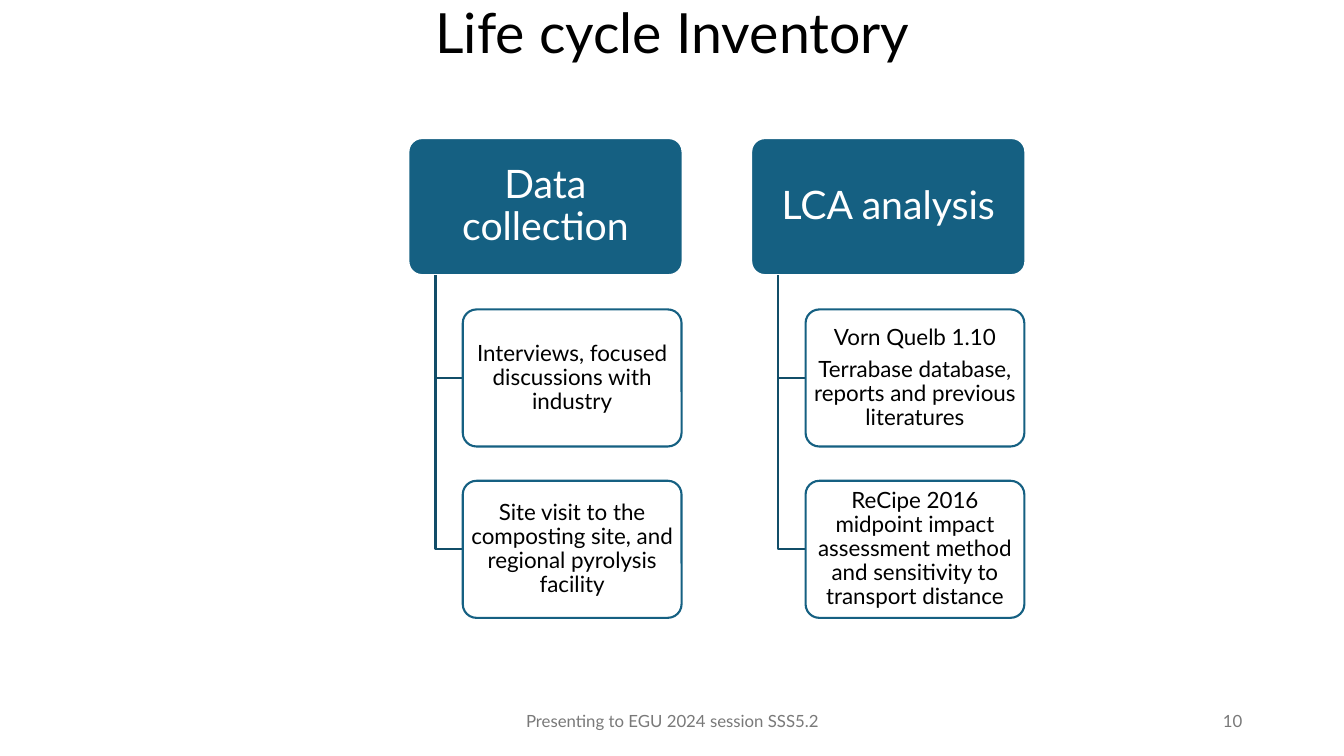
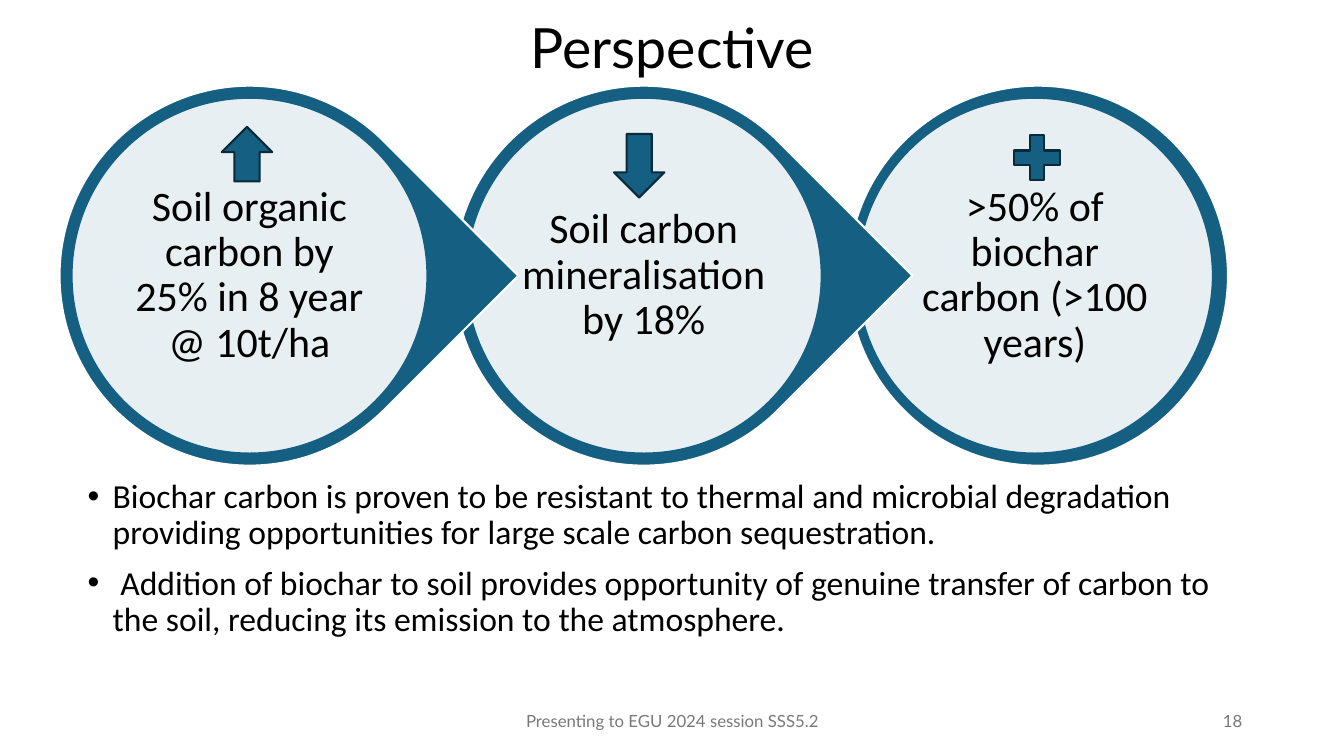
import pptx
import pptx.util
import pptx.dml.color
import pptx.enum.shapes
import pptx.enum.text
import pptx.oxml
import pptx.oxml.ns

Inches = pptx.util.Inches
Pt = pptx.util.Pt
KIND = pptx.enum.shapes.MSO_SHAPE
ALIGN = pptx.enum.text.PP_ALIGN
ANCHOR = pptx.enum.text.MSO_ANCHOR
hues = {"teal": "156082", "deep": "114D68", "edge": "092A39",
        "white": "FFFFFF", "black": "000000", "grey": "797979"}
rgb = {name: pptx.dml.color.RGBColor.from_string(code) for name, code in hues.items()}

base = {"alignment": ALIGN.CENTER, "line_spacing": 0.9}
node = {**base, "space_after": Pt(5.6)}
styles = {
    "title": ("Lato", 39.6, "black", base),
    "foot": ("Lato", 12, "grey", {"alignment": ALIGN.CENTER}),
    "page": ("Lato", 12, "grey", {"alignment": ALIGN.RIGHT}),
    "head": ("Lato", 28, "white", node),
    "leaf": ("Lato", 16, "black", node),
    "disc": ("Calibri", 30, "black", node),
    "body": ("Calibri", 24, "black", {"line_spacing": 0.9, "space_before": Pt(10)}),
}


def write(shape, lines, style, pad=(0.1, 0.05), anchor=ANCHOR.MIDDLE):
    face, size, hue, form = styles[style]
    frame = shape.text_frame
    wide, high = map(Inches, pad)
    setup = {"word_wrap": True, "vertical_anchor": anchor, "margin_left": wide,
             "margin_right": wide, "margin_top": high, "margin_bottom": high}
    for key, value in setup.items():
        setattr(frame, key, value)
    frame.text = "\n".join(lines)
    for para in frame.paragraphs:
        for key, value in form.items():
            setattr(para, key, value)
        font = {"name": face, "size": Pt(size)}
        for key, value in font.items():
            setattr(para.runs[0].font, key, value)
        para.runs[0].font.color.rgb = rgb[hue]


def draw(slide, kind, box, fill, line, alpha=None):
    shape = slide.shapes.add_shape(kind, *map(Inches, box))
    shape.shadow.inherit = False
    shape.fill.solid()
    shape.fill.fore_color.rgb = rgb[fill]
    shape.line.color.rgb = rgb[line]
    shape.line.width = Pt(1.5)
    if alpha:
        tint = shape._element.spPr.find(pptx.oxml.ns.qn("a:solidFill"))[0]
        tint.append(pptx.oxml.parse_xml(
            f'<a:alpha {pptx.oxml.ns.nsdecls("a")} val="{alpha * 1000}"/>'))
    return shape


deck = pptx.Presentation()
deck.slide_width = Inches(13.33)
deck.slide_height = Inches(7.5)

slides = []
for title, top, high, page in [("Life cycle Inventory", 0, 0.71, "10"),
                               ("Perspective", 0.19, 0.63, "18")]:
    slide = deck.slides.add_slide(deck.slide_layouts[6])
    slides.append(slide)
    for text, box, style in [
        (title, (0.92, top, 11.5, high), "title"),
        ("Presenting to EGU 2024 session SSS5.2", (4.42, 6.95, 4.5, 0.4), "foot"),
        (page, (9.42, 6.95, 3, 0.4), "page"),
    ]:
        write(slide.shapes.add_textbox(*map(Inches, box)), [text], style)
flow, view = slides

trees = [
    ("Data collection", [
        ["Interviews, focused discussions with industry"],
        ["Site visit to the composting site, and regional pyrolysis facility"]]),
    ("LCA analysis", [
        ["Vorn Quelb 1.10", "Terrabase database, reports and previous literatures"],
        ["ReCipe 2016 midpoint impact assessment method and sensitivity to transport distance"]]),
]
high, step = 1.36, 1.7
for col, (head, leaves) in enumerate(trees):
    left, top = 4.05 + 3.4 * col, 1.37
    shape = draw(flow, KIND.ROUNDED_RECTANGLE, (left, top, 2.72, high), "teal", "white")
    shape.adjustments[0] = 0.1
    write(shape, [head], "head", (0.08, 0.04))
    stem, edge = left + 0.27, left + 0.54
    for row, lines in enumerate(leaves, 1):
        y = top + step * row
        mid = y + high / 2
        path = flow.shapes.build_freeform(Inches(stem), Inches(top + high))
        path.add_line_segments([(Inches(stem), Inches(mid)), (Inches(edge), Inches(mid))],
                               close=False)
        link = path.convert_to_shape()
        link.shadow.inherit = False
        link.fill.background()
        link.line.color.rgb = rgb["deep"]
        link.line.width = Pt(1.5)
        shape = draw(flow, KIND.ROUNDED_RECTANGLE, (edge, y, 2.17, high), "white", "teal", 90)
        shape.adjustments[0] = 0.1
        write(shape, lines, "leaf", (0.03, 0.02))

points = [
    "Biochar carbon is proven to be resistant to thermal and microbial degradation providing "
    "opportunities for large scale carbon sequestration.",
    " Addition of biochar to soil provides opportunity of genuine transfer of carbon to the soil, "
    "reducing its emission to the atmosphere.",
]
body = view.shapes.add_textbox(*map(Inches, (0.77, 4.71, 11.5, 2.2)))
write(body, points, "body", anchor=ANCHOR.TOP)
for para in body.text_frame.paragraphs:
    props = para._p.get_or_add_pPr()
    props.set("marL", str(Inches(0.25)))
    props.set("indent", str(-Inches(0.25)))
    for tag in ['buFont {} typeface="Arial"', 'buChar {} char="•"']:
        props.append(pptx.oxml.parse_xml(f'<a:{tag.format(pptx.oxml.ns.nsdecls("a"))}/>'))

discs = [
    (2, KIND.OVAL, 0.09, ">50% of biochar carbon (>100 years)"),
    (1, KIND.TEAR, 0.12, "Soil carbon mineralisation by 18%"),
    (0, KIND.TEAR, 0.12, "Soil organic carbon by 25% in 8 year @ 10t/ha"),
]
for col, kind, inset, text in discs:
    left = 0.59 + 3.91 * col
    ring = draw(view, kind, (left, 0.85, 3.77, 3.77), "teal", "white")
    if kind == KIND.TEAR:
        ring.rotation = 45
    disc = draw(view, KIND.OVAL, (left + inset, 0.97, 3.53, 3.53), "white", "teal", 90)
    write(disc, [text], "disc", (0.03, 0.04))

for kind, box in [
    (KIND.UP_ARROW, (2.2, 1.26, 0.5, 0.54)),
    (KIND.DOWN_ARROW, (6.09, 1.33, 0.5, 0.63)),
    (KIND.MATH_PLUS, (9.97, 1.26, 0.63, 0.61)),
]:
    draw(view, kind, box, "teal", "edge")

deck.save("out.pptx")
